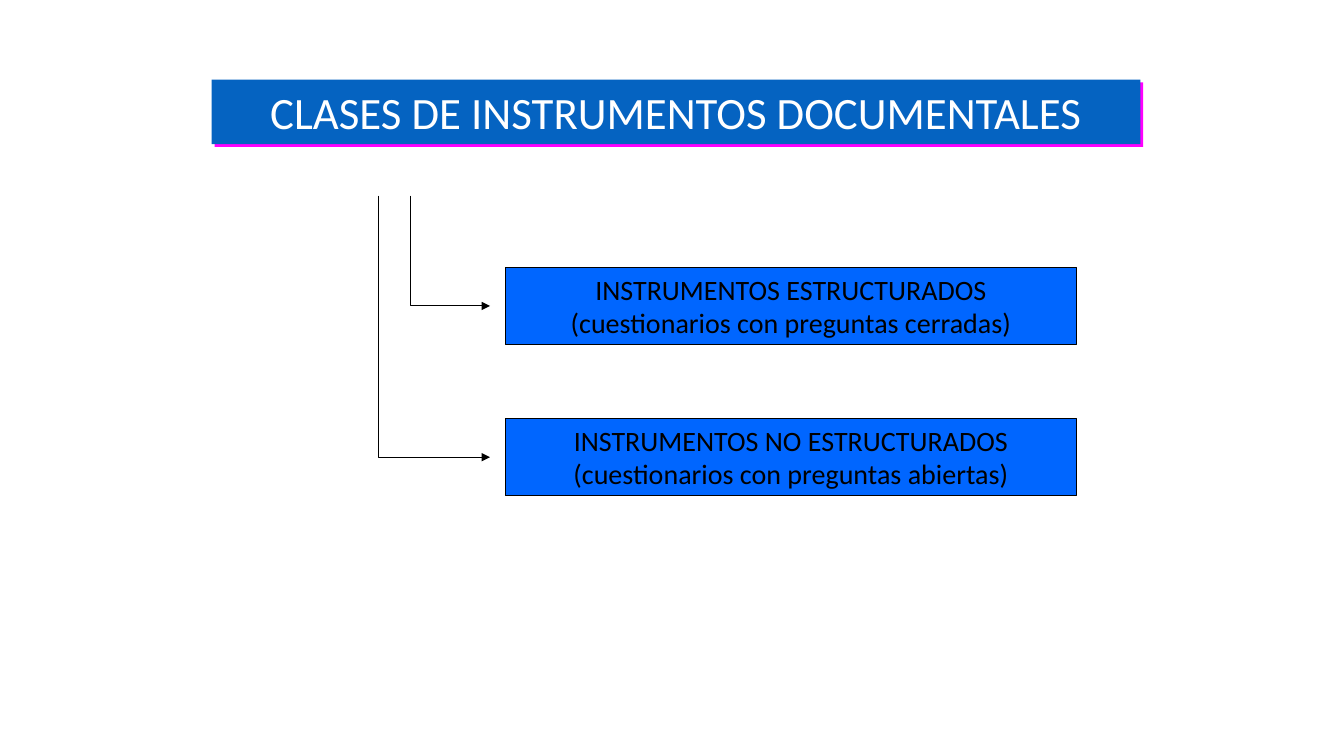
from lxml.etree import SubElement
from pptx import Presentation
from pptx.dml.color import RGBColor as RGB
from pptx.enum.shapes import MSO_SHAPE as SHAPE
from pptx.enum.text import MSO_ANCHOR as ANCHOR, PP_ALIGN as ALIGN
from pptx.oxml.ns import qn
from pptx.util import Inches, Pt

TITLE = "CLASES DE INSTRUMENTOS DOCUMENTALES"
CLASSES = [
    {"text": "INSTRUMENTOS ESTRUCTURADOS\v(cuestionarios con preguntas cerradas)", "stem": 4.07},
    {"text": "INSTRUMENTOS NO ESTRUCTURADOS\v(cuestionarios con preguntas abiertas)", "stem": 3.75},
]
THEME = {
    "font": "Calibri", "title_size": 32, "body_size": 20, "line_width": 0.75,
    "title_fill": "0563C1", "title_text": "FFFFFF", "title_shadow": "FF00FF",
    "box_fill": "0066FF", "ink": "000000",
}
TITLE_BOX = (2.1, 0.79, 9.21, 0.64)
BOX_LEFT, BOX_TOP, BOX_WIDTH, BOX_HEIGHT = 5.01, 2.65, 5.67, 0.77
BOX_PITCH = 1.5
ARROW_TOP, ARROW_END = 1.94, 4.86


def color(name):
    return RGB.from_string(THEME[name])


def set_line(sp):
    sp.line.color.rgb = color("ink")
    sp.line.width = Pt(THEME["line_width"])


def add_box(slide, at, text, fill, ink, size):
    sp = slide.shapes.add_shape(SHAPE.RECTANGLE, *map(Inches, at))
    sp.shadow.inherit = False
    sp.fill.solid()
    sp.fill.fore_color.rgb = color(fill)
    sp.line.fill.background()
    tf = sp.text_frame
    tf.word_wrap = True
    tf.vertical_anchor = ANCHOR.TOP
    tf.text = text
    p = tf.paragraphs[0]
    p.alignment = ALIGN.CENTER
    p.font.name = THEME["font"]
    p.font.size = Pt(THEME[size])
    p.font.color.rgb = color(ink)
    return sp


def add_hard_shadow(sp):
    effects = sp._element.spPr.find(qn("a:effectLst"))
    shadow = SubElement(effects, qn("a:outerShdw"), blurRad="0", dist=str(Pt(2.8)),
                        dir=str(45 * 60000), algn="ctr", rotWithShape="0")
    SubElement(shadow, qn("a:srgbClr"), val=THEME["title_shadow"])


def add_elbow_arrow(slide, stem, y):
    builder = slide.shapes.build_freeform(Inches(stem), Inches(ARROW_TOP))
    corners = [(Inches(stem), Inches(y)), (Inches(ARROW_END), Inches(y))]
    builder.add_line_segments(corners, close=False)
    sp = builder.convert_to_shape()
    sp.shadow.inherit = False
    sp.fill.background()
    set_line(sp)
    SubElement(sp.line._get_or_add_ln(), qn("a:tailEnd"), type="triangle")


def main():
    prs = Presentation()
    prs.slide_width, prs.slide_height = Inches(13.33), Inches(7.5)
    slide = prs.slides.add_slide(prs.slide_layouts[6])

    title = add_box(slide, TITLE_BOX, TITLE, "title_fill", "title_text", "title_size")
    add_hard_shadow(title)

    for i, item in enumerate(CLASSES):
        top = BOX_TOP + i * BOX_PITCH
        at = (BOX_LEFT, top, BOX_WIDTH, BOX_HEIGHT)
        set_line(add_box(slide, at, item["text"], "box_fill", "ink", "body_size"))
        add_elbow_arrow(slide, item["stem"], top + BOX_HEIGHT / 2)

    prs.save("out.pptx")


if __name__ == "__main__":
    main()
